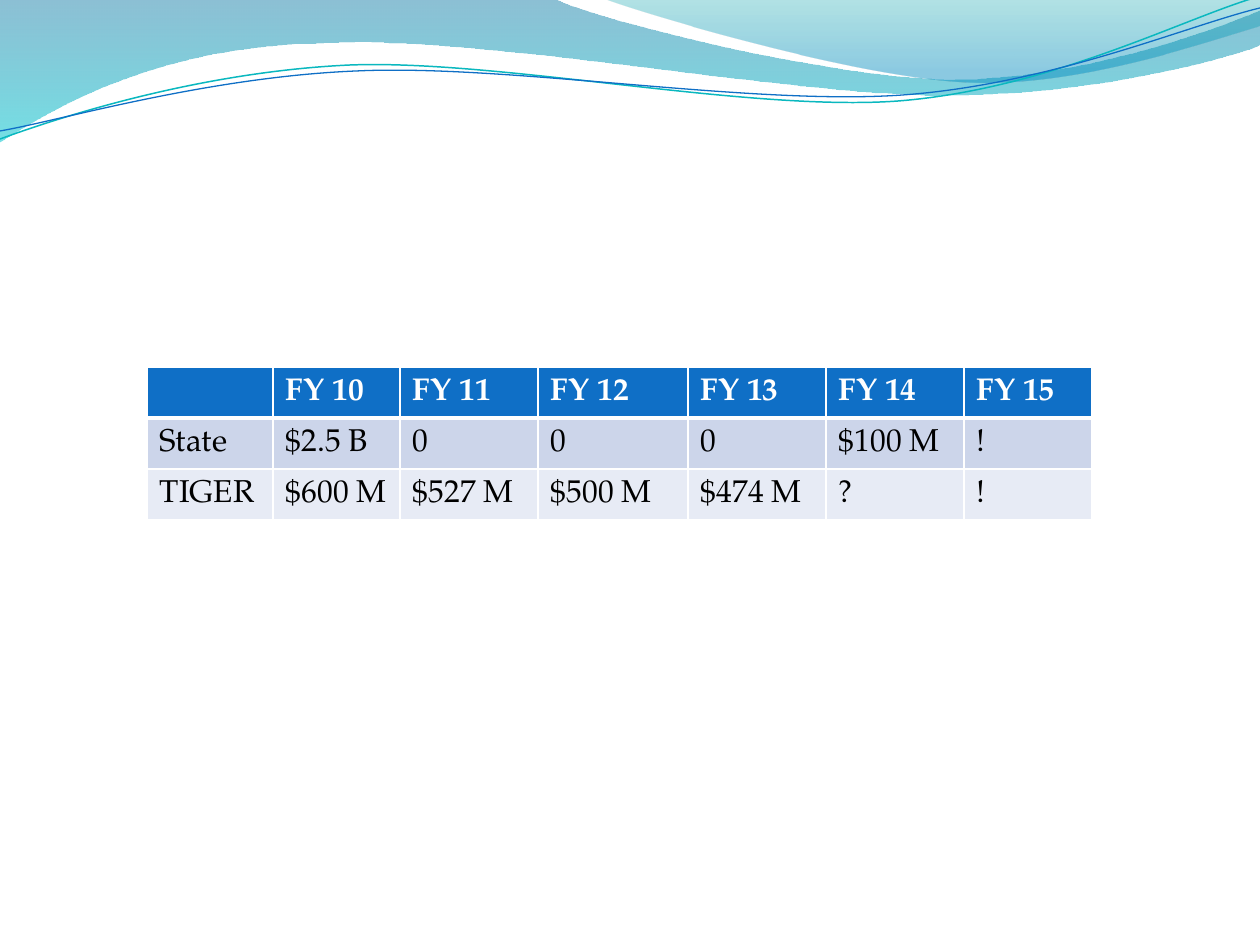
from lxml.etree import SubElement
from pptx import Presentation
from pptx.dml.color import RGBColor
from pptx.oxml import parse_xml
from pptx.oxml.ns import nsdecls, qn
from pptx.util import Pt

EMU_PER_PX = 914400 / 126
FONT = "TeX Gyre Pagella"
HEADER, BAND_1, BAND_2 = "0F6FC6", "CCD5EA", "E7EBF5"
WHITE, BLACK = "FFFFFF", "000000"

# Outlines: a start point, then lines (one point) and cubic curves (three points)
BROAD_WAVE = [
    [(0, 0)], [(554, -1)],
    [(600, 21), (837, 79), (955, 79)], [(1075, 79), (1207, 33), (1260, 11)],
    [(1261, 45)],
    [(1239, 55), (1096, 96), (940, 95)], [(784, 95), (481, 35), (324, 43)],
    [(163, 45), (58, 105), (-1, 142)],
]
RIGHT_WAVE = [
    [(604, -1)],
    [(642, 14), (859, 78), (969, 82)], [(1079, 87), (1211, 40), (1260, 26)],
    [(1260, 0)],
]
TEAL_LINE = [
    [(0, 139)], [(60, 117), (199, 72), (349, 65)],
    [(498, 59), (747, 112), (898, 101)], [(1050, 89), (1182, 19), (1257, -3)],
]
BLUE_LINE = [
    [(0, 131)], [(59, 121), (207, 77), (357, 71)],
    [(508, 64), (752, 106), (903, 95)], [(1053, 84), (1186, 26), (1260, 8)],
]

COL_WIDTHS = [126, 127, 138, 150, 138, 138, 128]
ROW_HEIGHT = 51
ROWS = [
    ["", "FY 10", "FY 11", "FY 12", "FY 13", "FY 14", "FY 15"],
    ["State", "$2.5 B", "0", "0", "0", "$100 M", "!"],
    ["TIGER", "$600 M", "$527 M", "$500 M", "$474 M", "?", "!"],
]


def px(n):
    return round(n * EMU_PER_PX)


def color(hex_string):
    return RGBColor.from_string(hex_string)


def add_outline(s, segments, close):
    """Freeform whose three-point segments become cubic curves."""
    points = [(px(x), px(y)) for seg in segments for x, y in seg]
    builder = s.shapes.build_freeform(*points[0])
    builder.add_line_segments(points[1:], close=close)
    sp = builder.convert_to_shape()
    sp.shadow.inherit = False
    lines = iter(list(sp._element.iter(qn("a:lnTo"))))
    for seg in segments[1:]:
        steps = [next(lines) for _ in seg]
        if len(steps) == 3:
            steps[0].addprevious(parse_xml(f'<a:cubicBezTo {nsdecls("a")}/>'))
            curve = steps[0].getprevious()
            for step in steps:
                curve.append(step[0])
                step.getparent().remove(step)
    return sp


def add_wave(s, segments, stops):
    """Closed shape with a see-through gradient running downwards."""
    sp = add_outline(s, segments, True)
    sp.line.fill.background()
    sp.fill.gradient()
    sp.fill.gradient_angle = 270
    for stop, (position, hex_string, _) in zip(sp.fill.gradient_stops, stops):
        stop.position = position
        stop.color.rgb = color(hex_string)
    tags = sp.fill._xPr.iter(qn("a:srgbClr"))
    for tag, (_, _, alpha) in zip(tags, stops):
        SubElement(tag, qn("a:alpha")).set("val", str(alpha * 1000))


def add_curve(s, segments, hex_string, width):
    sp = add_outline(s, segments, False)
    sp.fill.background()
    sp.line.color.rgb = color(hex_string)
    sp.line.width = Pt(width)


def set_borders(cell, top, bottom):
    widths = {"lnL": 1, "lnR": 1, "lnT": top, "lnB": bottom}
    tc_pr = cell._tc.get_or_add_tcPr()
    for i, (side, width) in enumerate(widths.items()):
        tc_pr.insert(i, parse_xml(
            f'<a:{side} {nsdecls("a")} w="{Pt(width)}"><a:solidFill>'
            f'<a:srgbClr val="{WHITE}"/></a:solidFill></a:{side}>'))


def fill_cell(cell, text, fill, header):
    cell.margin_left, cell.margin_right = px(13), px(9)
    cell.margin_top, cell.margin_bottom = px(6), 0
    cell.fill.solid()
    cell.fill.fore_color.rgb = color(fill)
    p = cell.text_frame.paragraphs[0]
    p.text = text
    p.line_spacing = 1.15
    p.space_after = Pt(10)
    p.font.name = FONT
    p.font.size = Pt(18)
    p.font.bold = header
    p.font.color.rgb = color(WHITE if header else BLACK)


def add_funding_table(s, left, top):
    table = s.shapes.add_table(
        len(ROWS), len(COL_WIDTHS), px(left), px(top),
        px(sum(COL_WIDTHS)), px(ROW_HEIGHT * len(ROWS))).table
    for col, width in zip(table.columns, COL_WIDTHS):
        col.width = px(width)
    for r, (texts, fill) in enumerate(zip(ROWS, [HEADER, BAND_1, BAND_2])):
        table.rows[r].height = px(ROW_HEIGHT)
        for c, text in enumerate(texts):
            cell = table.cell(r, c)
            fill_cell(cell, text, fill, r == 0)
            set_borders(cell, 3 if r == 1 else 1, 3 if r == 0 else 1)


def main():
    prs = Presentation()
    prs.slide_width, prs.slide_height = px(1260), px(945)
    s = prs.slides.add_slide(prs.slide_layouts[6])

    # Wave decoration along the top
    add_wave(s, BROAD_WAVE, [(0, "0074A1", 45), (1, "00C6CF", 55)])
    add_wave(s, RIGHT_WAVE, [(0, "00A1A9", 30), (0.8, "008BBF", 45)])
    add_curve(s, TEAL_LINE, "0AB8BF", 0.85)
    add_curve(s, BLUE_LINE, "0F6FC6", 0.75)

    # Funding by fiscal year
    add_funding_table(s, 147, 367)

    prs.save("out.pptx")


if __name__ == "__main__":
    main()
